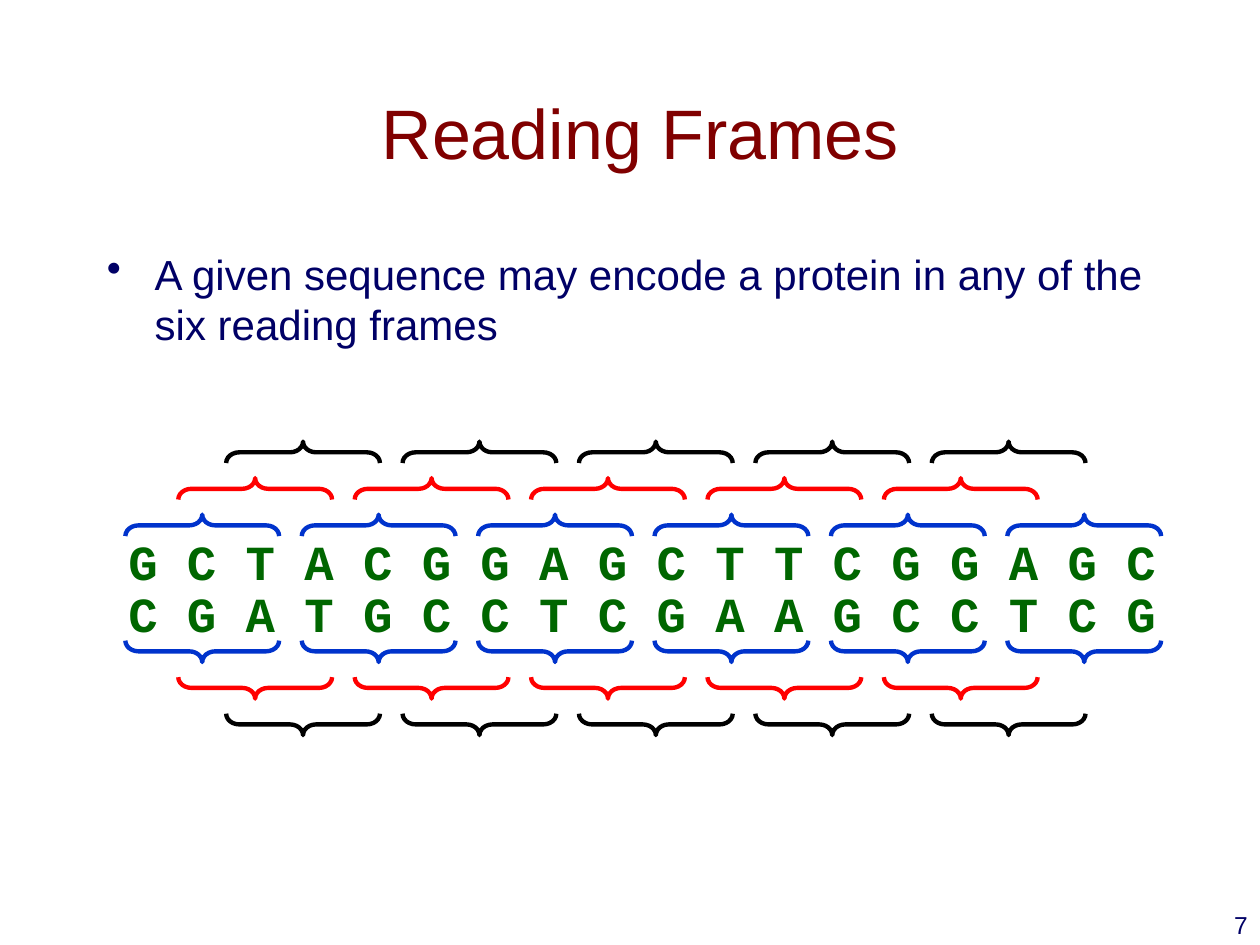
from pptx import Presentation
from pptx import util as u
from pptx.dml.color import RGBColor
from pptx.enum import shapes, text
from lxml import etree

HUES = {"title": "800000", "body": "000066", "base": "006600",
        "blue": "0033CC", "red": "FF0000", "black": "000000"}
STRANDS = ["G C T A C G G A G C T T C G G A G C",
           "C G A T G C C T C G A A G C C T C G"]
FRAMES = [("blue", 1.52, 6), ("red", 1.94, 5), ("black", 2.32, 5)]
CODON = 1.4
STEP = 0.29
THICK, SPAN = 0.17, 1.22


def hue(name):
    return RGBColor.from_string(HUES[name])


def label(slide, words, box, size, color, face="Arial", bold=False,
          align=text.PP_ALIGN.LEFT, anchor=text.MSO_ANCHOR.TOP, wrap=True):
    shape = slide.shapes.add_textbox(*map(u.Inches, box))
    frame = shape.text_frame
    frame.word_wrap = wrap
    frame.vertical_anchor = anchor
    para = frame.paragraphs[0]
    para.text = words
    para.alignment = align
    font = para.font
    font.name, font.size, font.bold = face, u.Pt(size), bold
    font.color.rgb = hue(color)
    return para


def bullet(para, size):
    para.space_before = u.Pt(0.2 * size)
    props = para._p.get_or_add_pPr()
    props.set("marL", str(u.Inches(0.38)))
    props.set("indent", str(-u.Inches(0.38)))
    mark = etree.Element(
        "{http://schemas.openxmlformats.org/drawingml/2006/main}buChar", char="•")
    props.find("{*}defRPr").addprevious(mark)


def brace(slide, left, top, color, turn):
    shape = slide.shapes.add_shape(
        shapes.MSO_SHAPE.LEFT_BRACE,
        *map(u.Inches, (left, top, THICK, SPAN)))
    shape.rotation = turn
    shape.adjustments[0] = 0.61
    shape.shadow.inherit = False
    shape.fill.background()
    shape.line.color.rgb = hue(color)
    shape.line.width = u.Pt(2.5)
    if turn == 270:
        shape._element.spPr.xfrm.set("flipV", "1")


def frames(slide, top, step, turn):
    for row, (color, left, count) in enumerate(FRAMES):
        for col in range(count):
            brace(slide, left + col * CODON, top + row * step, color, turn)


def main():
    deck = Presentation()
    deck.slide_width, deck.slide_height = u.Inches(10), u.Inches(7.5)
    slide = deck.slides.add_slide(deck.slide_layouts[6])
    label(slide, "Reading Frames", (0.83, 0.42, 8.5, 1.25), 40, "title",
          align=text.PP_ALIGN.CENTER, anchor=text.MSO_ANCHOR.MIDDLE)
    para = label(slide, "A given sequence may encode a protein in any of the "
                 "six reading frames", (0.75, 1.92, 8.5, 4.5), 24, "body")
    bullet(para, 24)
    for row, strand in enumerate(STRANDS):
        label(slide, strand, (0.92, 4.17 + row * 0.41, 8.37, 0.57), 28, "base",
              face="Courier New", bold=True, wrap=False)
    frames(slide, 3.56, -STEP, 90)
    frames(slide, 4.56, STEP, 270)
    label(slide, "7", (7.92, 7.17, 2.08, 0.5), 14, "body",
          align=text.PP_ALIGN.RIGHT)
    deck.save("out.pptx")


if __name__ == "__main__":
    main()
